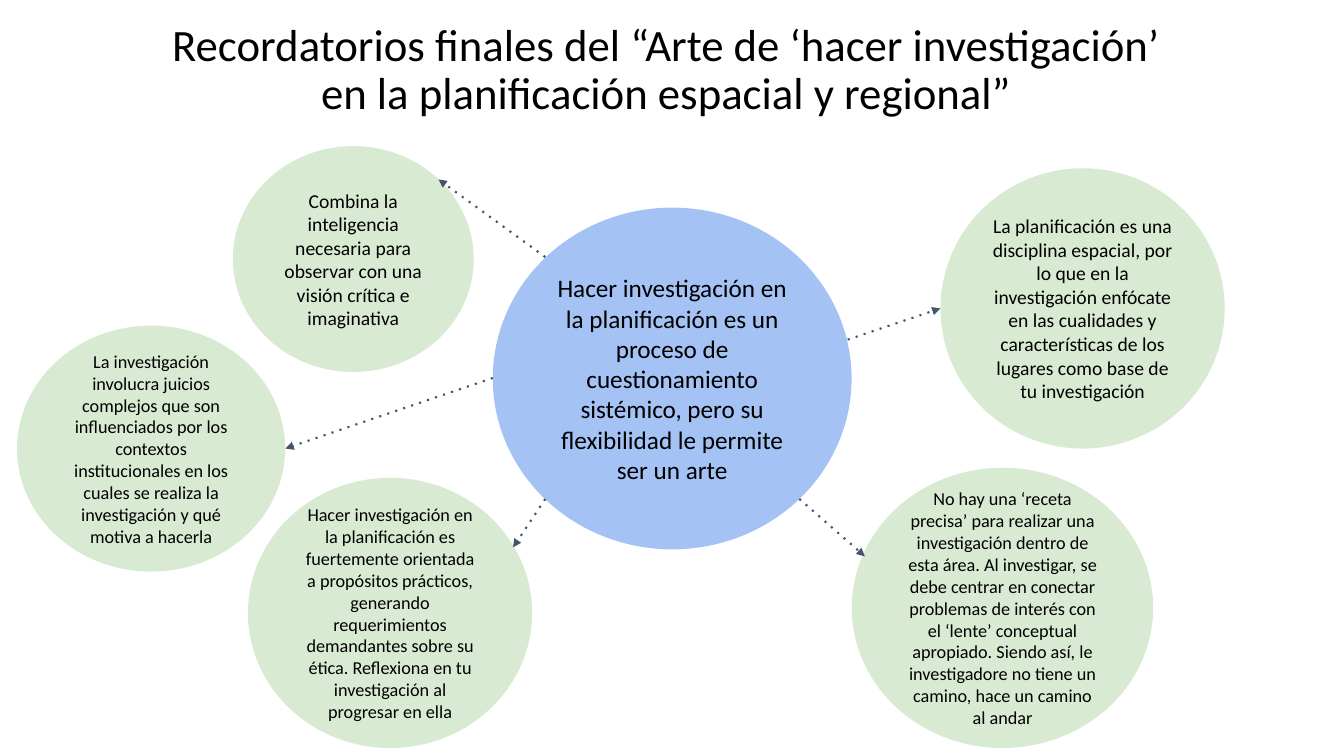
from lxml import etree
from pptx import Presentation
from pptx.dml.color import RGBColor
from pptx.enum.shapes import MSO_CONNECTOR, MSO_SHAPE
from pptx.enum.text import MSO_ANCHOR, MSO_AUTO_SIZE, PP_ALIGN
from pptx.oxml.ns import qn
from pptx.util import Pt

ELLIPSE = MSO_SHAPE.OVAL
STRAIGHT = MSO_CONNECTOR.STRAIGHT
MIDDLE = MSO_ANCHOR.MIDDLE
NO_AUTOFIT = MSO_AUTO_SIZE.NONE
CENTER = PP_ALIGN.CENTER

BLACK = RGBColor(0x00, 0x00, 0x00)
WHITE = RGBColor(0xFF, 0xFF, 0xFF)
BLUE = RGBColor(0xA4, 0xC2, 0xF4)
GREEN = RGBColor(0xD9, 0xEA, 0xD3)
SLATE = RGBColor(0x44, 0x54, 0x6A)
FONT = "Calibri"
TITLE_ONLY = 5

TITLE = ("Recordatorios finales del “Arte de ‘hacer investigación’ "
         "en la planificación espacial y regional”")

# Text, font size, fill, (left, top, width, height)
BUBBLES = [
    ("Hacer investigación en la planificación es un proceso de cuestionamiento "
     "sistémico, pero su flexibilidad le permite ser un arte",
     18, BLUE, (352, 148.3, 256.3, 244.1)),
    ("Combina la inteligencia necesaria para observar con una visión crítica "
     "e imaginativa",
     14, GREEN, (166.3, 104.4, 172.1, 161.3)),
    ("La investigación involucra juicios complejos que son influenciados por los "
     "contextos institucionales en los cuales se realiza la investigación y qué "
     "motiva a hacerla",
     13, GREEN, (12.2, 232.6, 191.5, 175.7)),
    ("Hacer investigación en la planificación es fuertemente orientada a "
     "propósitos prácticos, generando requerimientos demandantes sobre su ética. "
     "Reflexiona en tu investigación al progresar en ella",
     13, GREEN, (177.1, 341.3, 203, 193)),
    ("La planificación es una disciplina espacial, por lo que en la investigación "
     "enfócate en las cualidades y características de los lugares como base de tu "
     "investigación",
     14, GREEN, (671.8, 120.2, 203, 200.2)),
    ("No hay una ‘receta precisa’ para realizar una investigación dentro de esta "
     "área. Al investigar, se debe centrar en conectar problemas de interés con el "
     "‘lente’ conceptual apropiado. Siendo así, le investigadore no tiene un camino, "
     "hace un camino al andar",
     13, GREEN, (608.4, 334.1, 215.3, 200.2)),
]

# Start x, start y, end x, end y
ARROWS = [
    (389.5, 183.6, 313.2, 128.2),
    (352, 270, 203.8, 320.4),
    (389.5, 356.4, 366.5, 391),
    (605.5, 242.6, 671.8, 220.3),
    (571, 356.4, 617.8, 397.4),
]


def set_attributes(target, values):
    for name, value in values.items():
        setattr(target, name, value)


def write_text(shape, text, size, vertical_margin, line_spacing):
    frame = shape.text_frame
    set_attributes(frame, {
        "text": text, "word_wrap": True, "auto_size": NO_AUTOFIT,
        "vertical_anchor": MIDDLE,
        "margin_left": Pt(7.2), "margin_right": Pt(7.2),
        "margin_top": Pt(vertical_margin), "margin_bottom": Pt(vertical_margin),
    })
    paragraph = frame.paragraphs[0]
    set_attributes(paragraph, {"alignment": CENTER, "line_spacing": line_spacing})
    font = paragraph.runs[0].font
    set_attributes(font, {"name": FONT, "size": Pt(size)})
    font.color.rgb = BLACK


def add_title(slide):
    title = slide.shapes.title
    set_attributes(title, {"left": Pt(110.2), "top": Pt(23.8),
                           "width": Pt(731.5), "height": Pt(54)})
    write_text(title, TITLE, 32, 3.6, 0.9)


def add_bubble(slide, text, size, color, box):
    bubble = slide.shapes.add_shape(ELLIPSE, *map(Pt, box))
    bubble.shadow.inherit = False
    bubble.fill.solid()
    bubble.fill.fore_color.rgb = color
    bubble.line.fill.background()
    write_text(bubble, text, size, 7.2, 1.0)


def add_dotted_arrow(slide, points):
    arrow = slide.shapes.add_connector(STRAIGHT, *map(Pt, points))
    arrow.line.width = Pt(1.5)
    arrow.line.color.rgb = SLATE
    outline = arrow.line._get_or_add_ln()
    etree.SubElement(outline, qn("a:prstDash"), val="dot")
    etree.SubElement(outline, qn("a:tailEnd"), type="triangle")
    etree.SubElement(arrow._element.spPr, qn("a:effectLst"))


def main():
    presentation = Presentation()
    set_attributes(presentation, {"slide_width": Pt(960), "slide_height": Pt(540)})
    slide = presentation.slides.add_slide(presentation.slide_layouts[TITLE_ONLY])
    slide.background.fill.solid()
    slide.background.fill.fore_color.rgb = WHITE
    add_title(slide)
    for bubble in BUBBLES:
        add_bubble(slide, *bubble)
    for points in ARROWS:
        add_dotted_arrow(slide, points)
    presentation.save("out.pptx")


if __name__ == "__main__":
    main()
